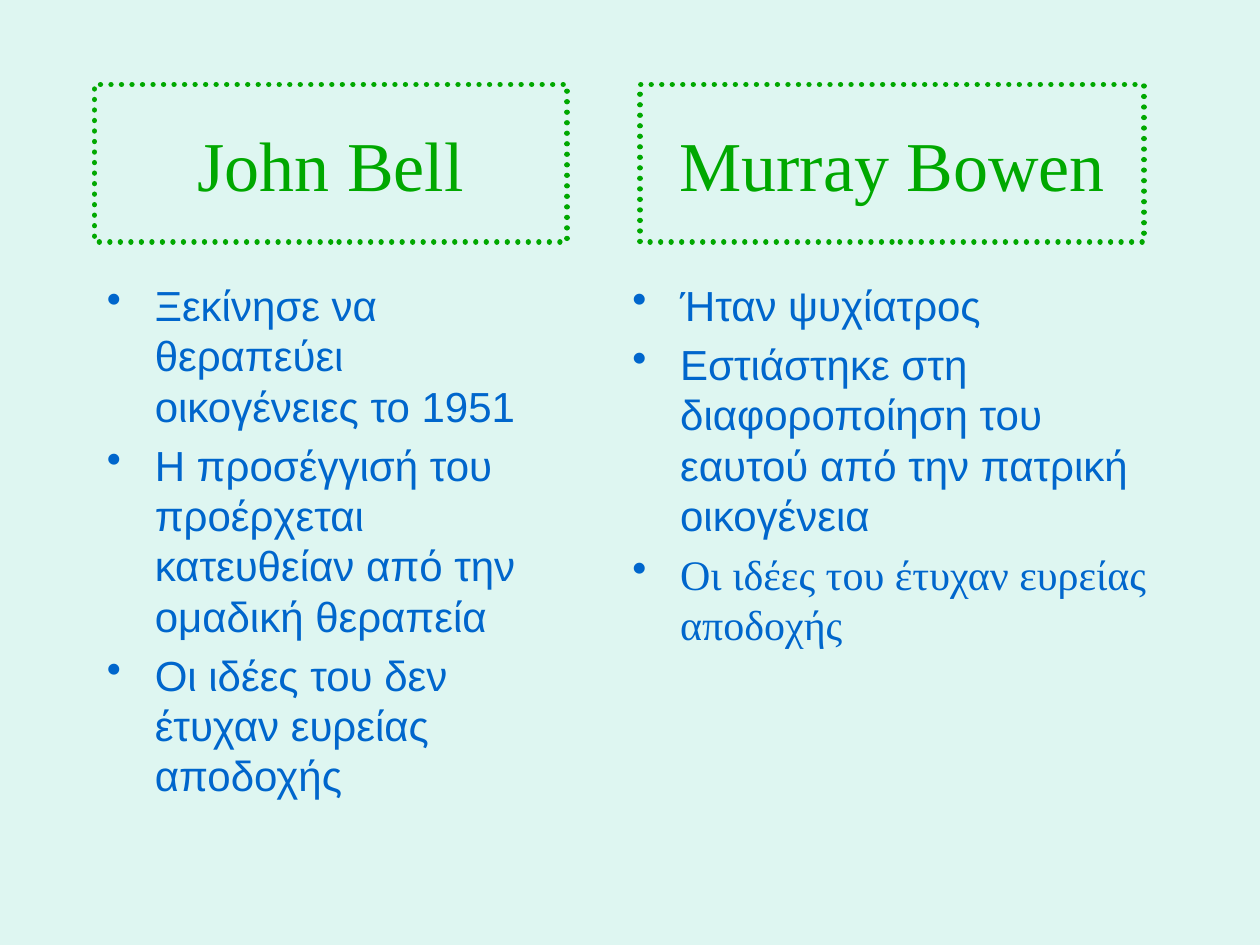
from lxml import etree
from pptx import Presentation
from pptx.dml.color import RGBColor
from pptx.enum.dml import MSO_LINE
from pptx.enum.shapes import MSO_SHAPE
from pptx.enum.text import MSO_ANCHOR, PP_ALIGN
from pptx.oxml.ns import qn
from pptx.util import Inches, Pt

DOT = MSO_LINE.ROUND_DOT
RECT = MSO_SHAPE.RECTANGLE
MID, TOP = MSO_ANCHOR.MIDDLE, MSO_ANCHOR.TOP
MITTE = PP_ALIGN.CENTER
SANS, SERIF = "Arial", "Times New Roman"
GREEN, BLUE, MINT = "00A800", "0066CC", "DEF6F1"

COLS = [
    {
        "name": "John Bell",
        "head": (0.75, 3.75),
        "body": (0.75, 3.75, 4.5),
        "points": [
            ("Ξεκίνησε να θεραπεύει οικογένειες το 1951", SANS),
            ("Η προσέγγισή του προέρχεται κατευθείαν από την ομαδική θεραπεία", SANS),
            ("Οι ιδέες του δεν έτυχαν ευρείας αποδοχής", SANS),
        ],
    },
    {
        "name": "Murray Bowen",
        "head": (5.08, 4),
        "body": (4.92, 4.33, 3.75),
        "points": [
            ("Ήταν ψυχίατρος", SANS),
            ("Εστιάστηκε στη διαφοροποίηση του εαυτού από την πατρική οικογένεια", SANS),
            ("Οι ιδέες του έτυχαν ευρείας αποδοχής", SERIF),
        ],
    },
]
HEAD_TOP, HEAD_HIGH, BODY_TOP = 0.67, 1.25, 2.17
INDENT = Inches(0.38)


def tint(code):
    return RGBColor.from_string(code)


def add_run(para, text, face, size, code):
    run = para.add_run()
    run.text = text
    run.font.name = face
    run.font.size = Pt(size)
    run.font.color.rgb = tint(code)


def set_head(shape, left, wide, name):
    shape.left, shape.top = Inches(left), Inches(HEAD_TOP)
    shape.width, shape.height = Inches(wide), Inches(HEAD_HIGH)
    shape.fill.background()
    line = shape.line
    line.color.rgb = tint(GREEN)
    line.width = Pt(3)
    line.dash_style = DOT
    shape._element.spPr.find(qn("a:ln")).set("cap", "rnd")
    frame = shape.text_frame
    frame.word_wrap = True
    frame.vertical_anchor = MID
    para = frame.paragraphs[0]
    para.alignment = MITTE
    add_run(para, name, SERIF, 40, GREEN)


def add_list(slide, left, wide, high, points):
    box = slide.shapes.add_textbox(
        Inches(left), Inches(BODY_TOP), Inches(wide), Inches(high))
    frame = box.text_frame
    frame.word_wrap = True
    frame.vertical_anchor = TOP
    for i, (text, face) in enumerate(points):
        para = frame.add_paragraph() if i else frame.paragraphs[0]
        props = para._p.get_or_add_pPr()
        props.set("marL", str(INDENT))
        props.set("indent", str(-INDENT))
        etree.SubElement(props, qn("a:buChar")).set("char", "•")
        if i:
            para.space_before = Pt(4.8)
        add_run(para, text, face, 24, BLUE)


deck = Presentation()
deck.slide_width, deck.slide_height = Inches(10), Inches(7.5)
slide = deck.slides.add_slide(deck.slide_layouts[5])
back = slide.background.fill
back.solid()
back.fore_color.rgb = tint(MINT)

for i, col in enumerate(COLS):
    if i:
        head = slide.shapes.add_shape(RECT, 0, 0, 0, 0)
        head.shadow.inherit = False
    else:
        head = slide.shapes.title
    set_head(head, *col["head"], col["name"])
    add_list(slide, *col["body"], col["points"])

deck.save("out.pptx")
